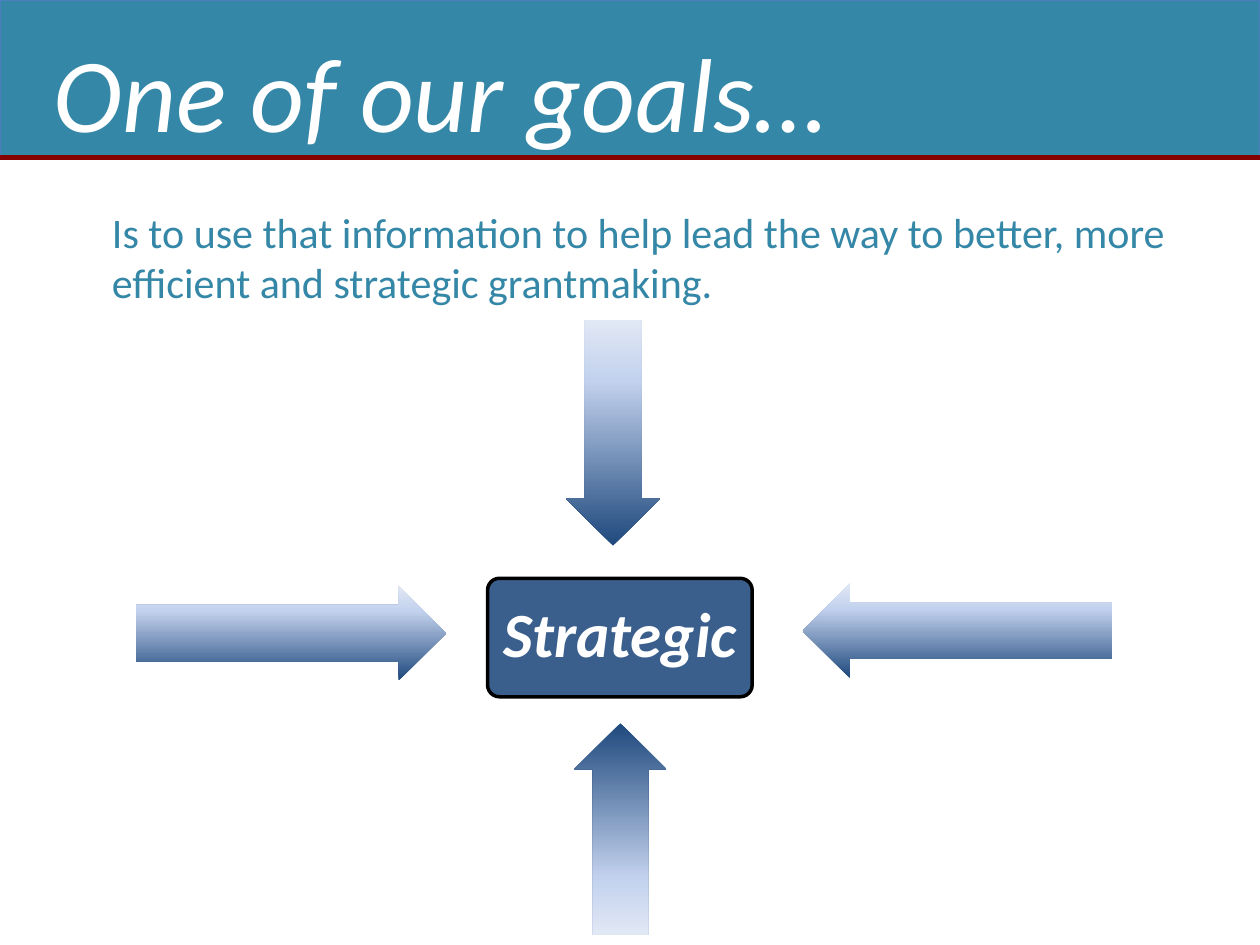
from dataclasses import dataclass

from lxml.etree import SubElement
from pptx import Presentation
from pptx.dml.color import RGBColor
from pptx.enum.shapes import MSO_CONNECTOR, MSO_SHAPE as Shape
from pptx.enum.text import MSO_ANCHOR, PP_ALIGN
from pptx.oxml.ns import qn
from pptx.util import Inches, Pt


@dataclass(frozen=True)
class Theme:
    font: str = "Calibri"
    teal: str = "3487A6"
    banner_edge: str = "4B7EBC"
    rule: str = "850000"
    navy: str = "1F497D"
    white: str = "FFFFFF"
    black: str = "000000"
    fade: tuple = ((0, "1F497D"), (73, "C2D1ED"), (100, "E1E8F5"))
    title_size: int = 60
    label_size: int = 36
    body_size: int = 24


theme = Theme()


def add_shape(kind, left, top, width, height):
    shape = page.shapes.add_shape(
        kind, Inches(left), Inches(top), Inches(width), Inches(height)
    )
    shape.shadow.inherit = False
    return shape


def write(frame, text, size, color, bold=False, italic=False):
    para = frame.paragraphs[0]
    span = para.add_run()
    span.text = text
    span.font.name = theme.font
    span.font.size = Pt(size)
    span.font.bold = bold
    span.font.italic = italic
    span.font.color.rgb = RGBColor.from_string(color)
    return para


deck = Presentation()
deck.slide_width = Inches(10)
deck.slide_height = Inches(7.5)
page = deck.slides.add_slide(deck.slide_layouts[6])

banner = add_shape(Shape.RECTANGLE, 0, 0, 10, 1.25)
banner.fill.solid()
banner.fill.fore_color.rgb = RGBColor.from_string(theme.teal)
banner.line.color.rgb = RGBColor.from_string(theme.banner_edge)
banner.line.width = Pt(0.75)

rule = page.shapes.add_connector(
    MSO_CONNECTOR.STRAIGHT, 0, Inches(1.25), Inches(10), Inches(1.25)
)
rule.line.color.rgb = RGBColor.from_string(theme.rule)
rule.line.width = Pt(3)
SubElement(rule._element.spPr, qn("a:effectLst"))

goal = add_shape(Shape.ROUNDED_RECTANGLE, 3.87, 4.59, 2.1, 0.94)
goal.adjustments[0] = 0.1
goal.fill.solid()
goal.fill.fore_color.rgb = RGBColor.from_string(theme.navy)
goal_color = goal._element.spPr.find(qn("a:solidFill"))[0]
SubElement(goal_color, qn("a:alpha"), val="88000")
goal.line.color.rgb = RGBColor.from_string(theme.black)
goal.line.width = Pt(2)
goal.text_frame.word_wrap = False
goal.text_frame.vertical_anchor = MSO_ANCHOR.MIDDLE
label = write(
    goal.text_frame, "Strategic", theme.label_size, theme.white, bold=True, italic=True
)
label.alignment = PP_ALIGN.CENTER
label.line_spacing = 0.9

arrows = (
    (Shape.UP_ARROW, 4.56, 5.74, 0.73, 1.68, 270),
    (Shape.DOWN_ARROW, 4.49, 2.54, 0.75, 1.79, 90),
    (Shape.RIGHT_ARROW, 1.08, 4.65, 2.46, 0.75, 90),
    (Shape.LEFT_ARROW, 6.37, 4.63, 2.46, 0.75, 90),
)
for kind, left, top, width, height, angle in arrows:
    arrow = add_shape(kind, left, top, width, height)
    arrow.adjustments[0] = 0.6
    arrow.adjustments[1] = 0.5
    arrow.line.fill.background()
    arrow.fill.gradient()
    arrow.fill.gradient_angle = angle
    stops = arrow._element.spPr.find(qn("a:gradFill")).find(qn("a:gsLst"))
    for stop in list(stops):
        stops.remove(stop)
    for percent, color in theme.fade:
        stop = SubElement(stops, qn("a:gs"), pos=str(percent * 1000))
        SubElement(stop, qn("a:srgbClr"), val=color)

texts = (
    (0.79, 1.59, 8.75, 0.91, theme.body_size, theme.teal, False,
     "Is to use that information to help lead the way to better, more "
     "efficient and strategic grantmaking."),
    (0.33, 0.17, 9.5, 1.11, theme.title_size, theme.white, True, "One of our goals…"),
)
for left, top, width, height, size, color, italic, text in texts:
    box = page.shapes.add_textbox(
        Inches(left), Inches(top), Inches(width), Inches(height)
    )
    box.text_frame.word_wrap = True
    write(box.text_frame, text, size, color, italic=italic)

deck.save("out.pptx")
